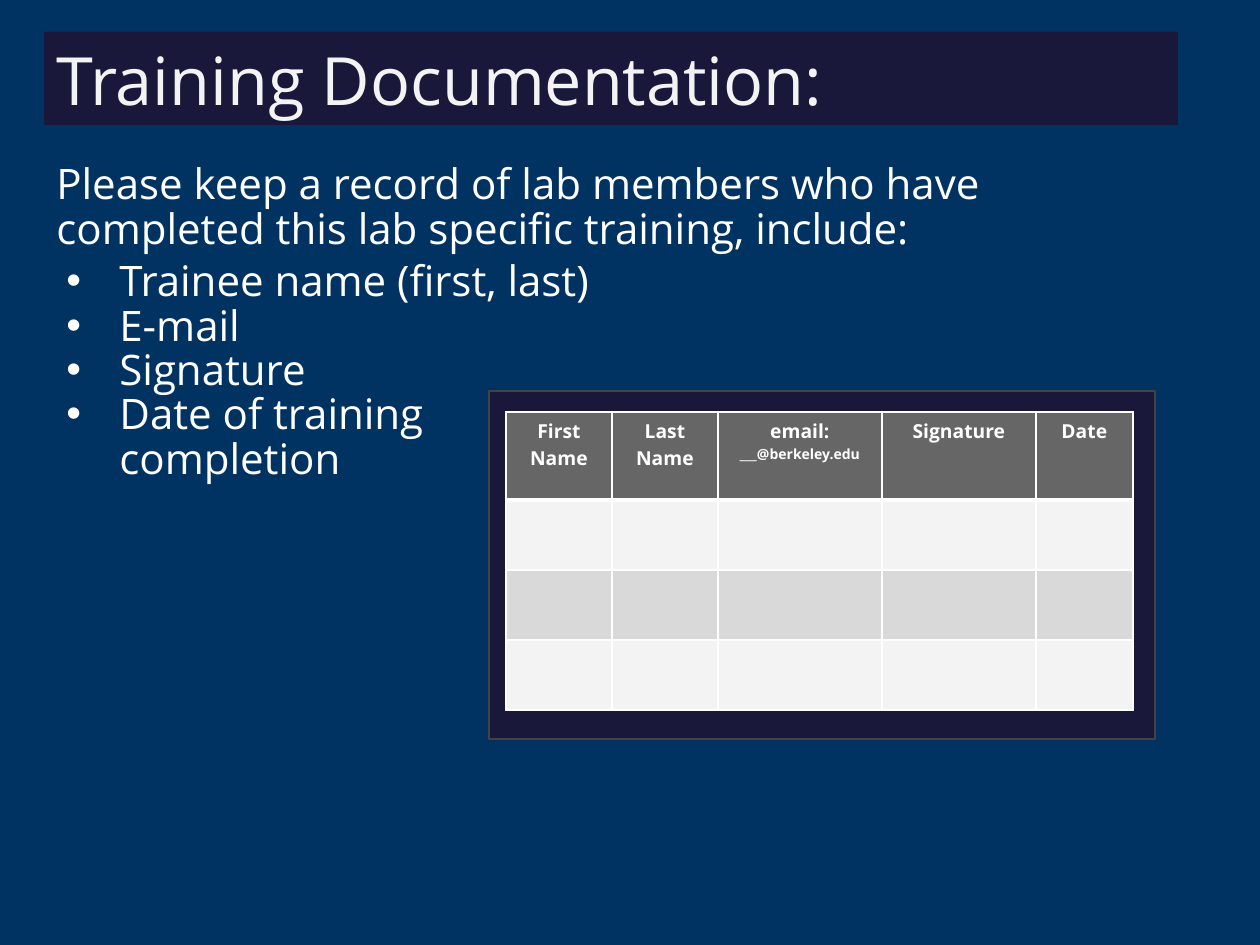
import pptx
import pptx.util
import pptx.dml.color
import pptx.enum.shapes
import pptx.enum.text
import pptx.oxml
import pptx.oxml.ns
import lxml.etree

PX = 914400 / 126
FONT = "Open Sans"
COLORS = {
    "background": "003262",
    "panel": "19183A",
    "panel_line": "434343",
    "title": "F3F3F3",
    "white": "FFFFFF",
    "header": "666666",
    "light_row": "F3F3F3",
    "dark_row": "D9D9D9",
}


def px(*lengths):
    return [round(length * PX) for length in lengths]


def style(font, size, color, bold=False):
    font.name = FONT
    font.size = pptx.util.Pt(size)
    font.bold = bold
    font.color.rgb = rgb[color]


rgb = {key: pptx.dml.color.RGBColor.from_string(value) for key, value in COLORS.items()}
qn = pptx.oxml.ns.qn

presentation = pptx.Presentation()
presentation.slide_width, presentation.slide_height = px(1260, 945)
slide = presentation.slides.add_slide(presentation.slide_layouts[5])
slide.background.fill.solid()
slide.background.fill.fore_color.rgb = rgb["background"]

# Title bar
title = slide.shapes.title
title.left, title.top, title.width, title.height = px(44, 32, 1134, 93)
title.fill.solid()
title.fill.fore_color.rgb = rgb["panel"]
title.text_frame.text = "Training Documentation:"
title.text_frame.auto_size = pptx.enum.text.MSO_AUTO_SIZE.NONE
title.text_frame.vertical_anchor = pptx.enum.text.MSO_ANCHOR.MIDDLE
title.text_frame.paragraphs[0].alignment = pptx.enum.text.PP_ALIGN.LEFT
style(title.text_frame.paragraphs[0].runs[0].font, 38, "title")

# Instructions and bulleted record fields
instructions = slide.shapes.add_textbox(*px(44, 158, 1004, 348)).text_frame
instructions.word_wrap = True
instructions.text = "\n".join([
    "Please keep a record of lab members who have completed this lab specific training, include:",
    "Trainee name (first, last)",
    "E-mail",
    "Signature",
    "Date of training\vcompletion",
])
for index, paragraph in enumerate(instructions.paragraphs):
    paragraph.line_spacing = 0.88
    if index == 1:
        paragraph.space_before = pptx.util.Pt(4.8)
    if index > 0:
        properties = paragraph._p.get_or_add_pPr()
        indent, hanging = px(63, -53)
        properties.set("marL", str(indent))
        properties.set("indent", str(hanging))
        bullet_color = lxml.etree.SubElement(properties, qn("a:buClr"))
        lxml.etree.SubElement(bullet_color, qn("a:srgbClr"), val=COLORS["white"])
        lxml.etree.SubElement(properties, qn("a:buFont"), typeface="Arial")
        lxml.etree.SubElement(properties, qn("a:buChar"), char="•")
    for run in paragraph.runs:
        style(run.font, 24, "white")

# Panel behind the sign-in table
panel = slide.shapes.add_shape(pptx.enum.shapes.MSO_SHAPE.RECTANGLE, *px(489, 391, 666, 348))
panel.shadow.inherit = False
panel.fill.solid()
panel.fill.fore_color.rgb = rgb["panel"]
panel.line.color.rgb = rgb["panel_line"]
panel.line.width = pptx.util.Pt(0.75)

# Sign-in table: each header is a list of (text, size) runs
headers = [
    [("First Name", 11)],
    [("Last Name", 11)],
    [("email:", 11), (" ", 9), ("___@berkeley.edu", 8)],
    [("Signature", 11)],
    [("Date", 11)],
]
column_widths = px(106, 106, 164, 154, 97)
row_heights = px(88, 70, 70, 70)
row_fills = ["header", "light_row", "dark_row", "light_row"]
sign_in = slide.shapes.add_table(
    len(row_heights), len(column_widths), *px(506, 412), sum(column_widths), sum(row_heights)
).table
for column, width in zip(sign_in.columns, column_widths):
    column.width = width
for row, height in zip(sign_in.rows, row_heights):
    row.height = height

for row_index, row in enumerate(sign_in.rows):
    for cell in row.cells:
        properties = cell._tc.get_or_add_tcPr()
        for side in "LRTB":
            under_header = (row_index, side) in [(0, "B"), (1, "T")]
            width = pptx.util.Pt(3 if under_header else 1)
            border = lxml.etree.SubElement(properties, qn("a:ln" + side), w=str(width))
            border_fill = lxml.etree.SubElement(border, qn("a:solidFill"))
            lxml.etree.SubElement(border_fill, qn("a:srgbClr"), val=COLORS["white"])
        cell.fill.solid()
        cell.fill.fore_color.rgb = rgb[row_fills[row_index]]

for cell, header in zip(sign_in.rows[0].cells, headers):
    paragraph = cell.text_frame.paragraphs[0]
    paragraph.alignment = pptx.enum.text.PP_ALIGN.CENTER
    for text, size in header:
        run = paragraph.add_run()
        run.text = text
        style(run.font, size, "white", bold=True)

presentation.save("out.pptx")
